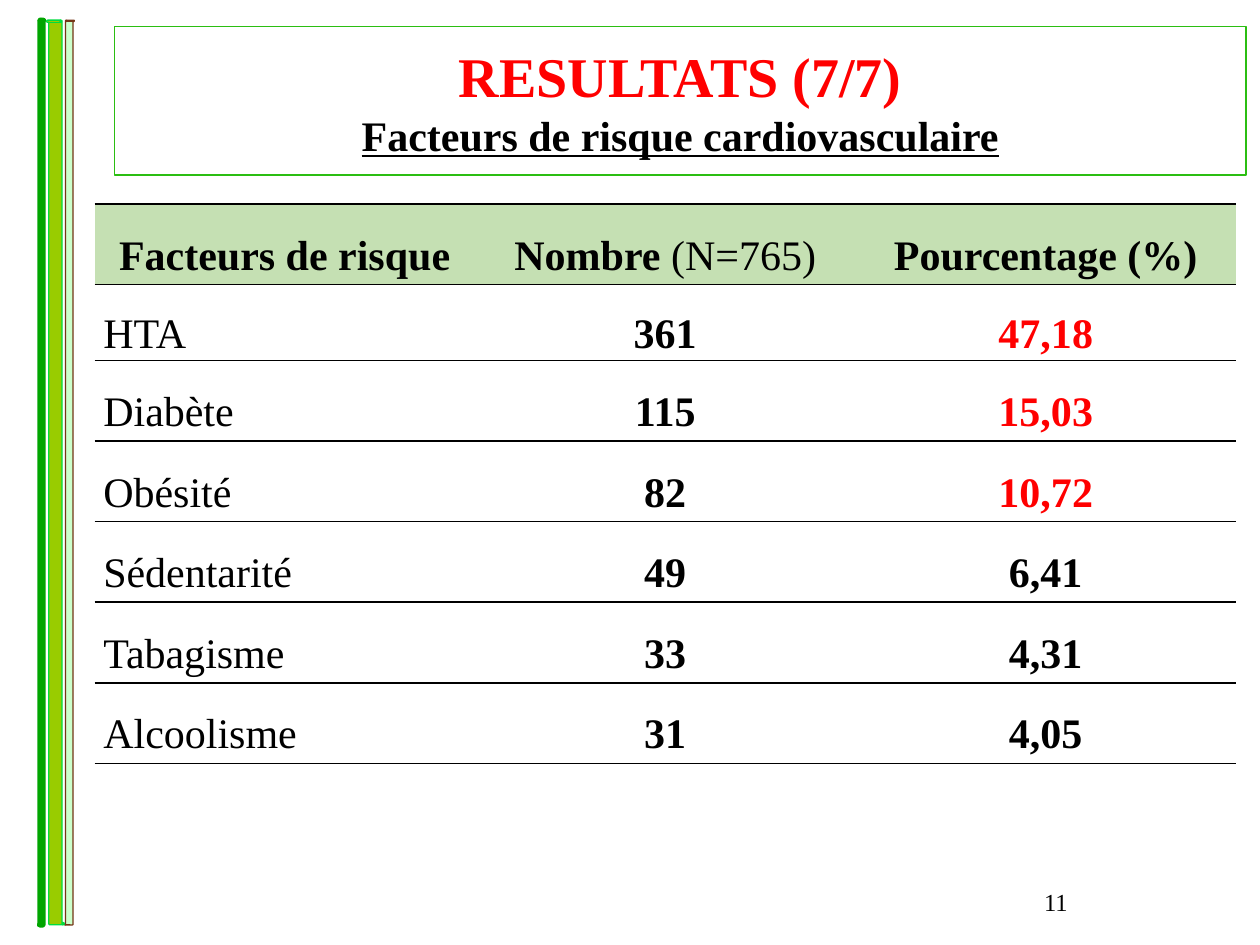
from lxml import etree
from pptx import Presentation
from pptx.dml.color import RGBColor
from pptx.enum.shapes import MSO_SHAPE
from pptx.enum.text import MSO_ANCHOR, PP_ALIGN
from pptx.oxml.ns import qn
from pptx.util import Inches, Pt

SCROLL, RECT = MSO_SHAPE.HORIZONTAL_SCROLL, MSO_SHAPE.RECTANGLE
LEFT, CENTER = PP_ALIGN.LEFT, PP_ALIGN.CENTER
MIDDLE = MSO_ANCHOR.MIDDLE
FONT = "Times New Roman"
PLAIN_TABLE = "{2D5ABB26-0587-4C30-8999-92F81FD0307C}"
W, H = 10, 7.5

COLORS = {
    "black": "000000", "red": "FF0000", "header": "C5E0B3", "frame": "2BBE12",
    "mint": "CCFFCC", "brown": "743515", "olive": "99CC00", "lime": "00DD40",
    "crimson": "C00000", "green": "00A500",
}
TITLE = "RESULTATS (7/7)"
SUBTITLE = "Facteurs de risque cardiovasculaire"
PAGE = "11"
HEADER = [
    [("Facteurs de risque", True)],
    [("Nombre ", True), ("(N=765)", False)],
    [("Pourcentage (%)", True)],
]
FACTORS = [
    ("HTA", "361", "47,18"),
    ("Diabète", "115", "15,03"),
    ("Obésité", "82", "10,72"),
    ("Sédentarité", "49", "6,41"),
    ("Tabagisme", "33", "4,31"),
    ("Alcoolisme", "31", "4,05"),
]
HIGHLIGHTED = 3
BARS = [
    (0.55, 3.75, 0.08, "mint", "brown", 0.75, True),
    (0.44, 3.75, 0.14, "olive", "lime", 0.75, False),
    (0.33, 3.75, 0.03, "crimson", "green", 3, True),
]
BAR_LENGTH = 7.18
ROW_H, FIRST_ROW_H = 0.64, 0.6


def rgb(name):
    return RGBColor.from_string(COLORS[name])


def style(font, size, color="black", bold=False):
    font.name, font.size, font.bold = FONT, Pt(size), bold
    font.color.rgb = rgb(color)


def add_box(s, shape, x, y, w, h, line, width):
    sp = s.shapes.add_shape(shape, Inches(x), Inches(y), Inches(w), Inches(h))
    sp.shadow.inherit = False
    sp.line.color.rgb = rgb(line)
    sp.line.width = Pt(width)
    return sp


def add_bars(s):
    for cx, cy, thick, fill, line, width, flip in BARS:
        sp = add_box(s, SCROLL, cx - BAR_LENGTH / 2, cy - thick / 2,
                     BAR_LENGTH, thick, line, width)
        sp.fill.solid()
        sp.fill.fore_color.rgb = rgb(fill)
        sp.rotation = 90
        if flip:
            sp._element.spPr.find(qn("a:xfrm")).set("flipV", "1")


def add_title(s):
    sp = add_box(s, RECT, 0.91, 0.21, 8.98, 1.18, "frame", 0.75)
    sp.fill.background()
    tf = sp.text_frame
    tf.word_wrap, tf.vertical_anchor = True, MIDDLE
    p = tf.paragraphs[0]
    p.alignment = CENTER
    r = p.add_run()
    r.text = TITLE
    style(r.font, 32, "red", True)
    p.add_line_break()
    r = p.add_run()
    r.text = SUBTITLE
    style(r.font, 24, bold=True)
    r.font.underline = True


def add_page_number(s):
    tf = s.shapes.add_textbox(Inches(7.91), Inches(6.99), Inches(0.94), Inches(0.5)).text_frame
    tf.word_wrap = True
    p = tf.paragraphs[0]
    p.text, p.alignment = PAGE, CENTER
    style(p.font, 14)


def add_rules(cell):
    tcPr = cell._tc.get_or_add_tcPr()
    for side in ("a:lnT", "a:lnB"):
        ln = etree.SubElement(tcPr, qn(side), w=str(Pt(1)))
        fill = etree.SubElement(ln, qn("a:solidFill"))
        etree.SubElement(fill, qn("a:srgbClr"), val=COLORS["black"])


def fill_cell(cell, runs, align, color, header):
    add_rules(cell)
    if header:
        cell.fill.solid()
        cell.fill.fore_color.rgb = rgb("header")
    else:
        cell.fill.background()
    cell.vertical_anchor = MIDDLE
    cell.margin_left = cell.margin_right = Inches(0.07)
    cell.margin_top = cell.margin_bottom = 0
    p = cell.text_frame.paragraphs[0]
    p.alignment, p.line_spacing = align, 1.5
    for text, bold in runs:
        r = p.add_run()
        r.text = text
        style(r.font, 24, color, bold)


def add_factor_table(s):
    rows, cols = len(FACTORS) + 1, len(HEADER)
    frame = s.shapes.add_table(rows, cols, Inches(0.75), Inches(1.62),
                               Inches(9.06), Inches(ROW_H * rows))
    table = frame.table
    table._tbl.tblPr.find(qn("a:tableStyleId")).text = PLAIN_TABLE
    table.horz_banding = False
    for i, row in enumerate(table.rows):
        row.height = Inches(FIRST_ROW_H if i == 1 else ROW_H)
    for j, runs in enumerate(HEADER):
        fill_cell(table.cell(0, j), runs, CENTER, "black", True)
    for i, factor in enumerate(FACTORS, 1):
        for j, text in enumerate(factor):
            color = "red" if j == cols - 1 and i <= HIGHLIGHTED else "black"
            fill_cell(table.cell(i, j), [(text, j > 0)], CENTER if j else LEFT, color, False)


def main():
    prs = Presentation()
    prs.slide_width, prs.slide_height = Inches(W), Inches(H)
    s = prs.slides.add_slide(prs.slide_layouts[6])
    add_bars(s)
    add_title(s)
    add_page_number(s)
    add_factor_table(s)
    prs.save("out.pptx")


if __name__ == "__main__":
    main()
